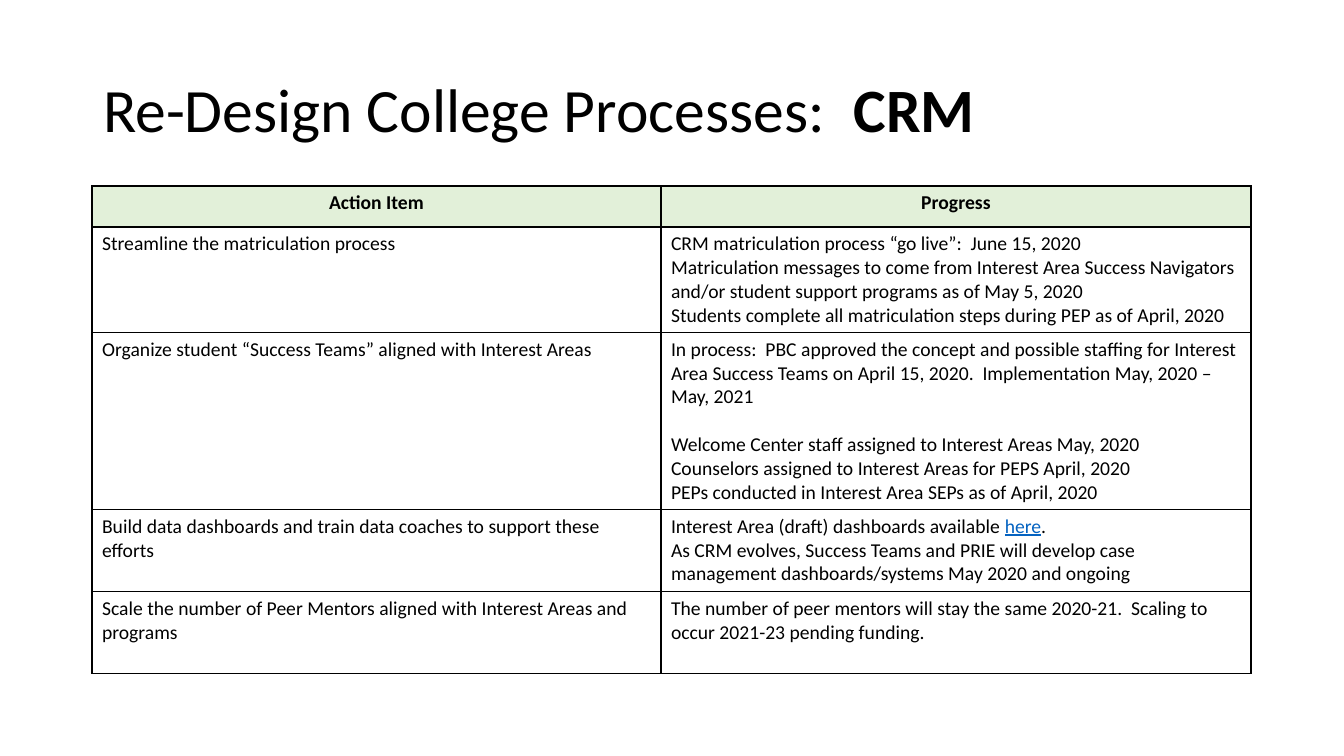
from dataclasses import dataclass

from lxml.etree import SubElement
from pptx import Presentation
from pptx.dml.color import RGBColor
from pptx.enum.text import MSO_ANCHOR as Anchor, MSO_AUTO_SIZE as AutoSize, PP_ALIGN as Align
from pptx.oxml.ns import qn
from pptx.util import Emu, Pt

PX = 914400 / 100.8


@dataclass(frozen=True)
class Theme:
    font: str = "Calibri"
    ink: str = "000000"
    link: str = "0563C1"
    header: str = "E2F0D9"
    title_size: int = 44
    table_size: int = 14
    paragraph_gap: int = 17
    border: int = 1


THEME = Theme()

TITLE = [("Re-Design College Processes:  ", {}), ("CRM", {"bold": True})]
HEADERS = ["Action Item", "Progress"]
COLUMN_WIDTHS = [569, 590]
ROW_HEIGHTS = [41, 105, 177, 82, 82]

# Each progress entry is a list of paragraphs, each paragraph a list of spans.
ACTIONS = [
    ("Streamline the matriculation process", [
        [("CRM matriculation process “go live”:  June 15, 2020", {})],
        [("Matriculation messages to come from Interest Area Success Navigators "
          "and/or student support programs as of May 5, 2020", {})],
        [("Students complete all matriculation steps during PEP as of April, 2020", {})],
    ]),
    ("Organize student “Success Teams” aligned with Interest Areas", [
        [("In process:  PBC approved the concept and possible staffing for Interest "
          "Area Success Teams on April 15, 2020.  Implementation May, 2020 – May, 2021", {})],
        [("Welcome Center staff assigned to Interest Areas May, 2020",
          {"gap": THEME.paragraph_gap})],
        [("Counselors assigned to Interest Areas for PEPS April, 2020", {})],
        [("PEPs conducted in Interest Area SEPs as of April, 2020", {})],
    ]),
    ("Build data dashboards and train data coaches to support these efforts", [
        [("Interest Area (draft) dashboards available ", {}),
         ("here", {"color": THEME.link, "underline": True}),
         (".", {})],
        [("As CRM evolves, Success Teams and PRIE will develop case "
          "management dashboards/systems May 2020 and ongoing", {})],
    ]),
    ("Scale the number of Peer Mentors aligned with Interest Areas and programs", [
        [("The number of peer mentors will stay the same 2020-21.  Scaling to "
          "occur 2021-23 pending funding.", {})],
    ]),
]


def px(length):
    return Emu(round(length * PX))


def add_span(para, text, size=THEME.table_size, color=THEME.ink, bold=False,
             underline=False, align=Align.LEFT, gap=0):
    """Append formatted text; a gap is space in points above its paragraph."""
    para.alignment = align
    if gap:
        para.space_before = Pt(gap)
    span = para.add_run()
    span.text = text
    font = span.font
    font.name, font.size = THEME.font, Pt(size)
    font.bold, font.underline = bold, underline
    font.color.rgb = RGBColor.from_string(color)


def fill_cell(cell, paragraphs, fill=None):
    properties = cell._tc.get_or_add_tcPr()
    for side in ("lnL", "lnR", "lnT", "lnB"):
        line = SubElement(properties, qn(f"a:{side}"), w=str(Pt(THEME.border)))
        SubElement(SubElement(line, qn("a:solidFill")), qn("a:srgbClr"), val=THEME.ink)
    if fill:
        cell.fill.solid()
        cell.fill.fore_color.rgb = RGBColor.from_string(fill)
    else:
        cell.fill.background()
    frame = cell.text_frame
    for index, spans in enumerate(paragraphs):
        para = frame.add_paragraph() if index else frame.paragraphs[0]
        for text, style in spans:
            add_span(para, text, **style)


def place_title(page, left, top, width, height):
    title = page.shapes.title
    title.left, title.top, title.width, title.height = map(px, (left, top, width, height))
    frame = title.text_frame
    frame.word_wrap = True
    frame.auto_size = AutoSize.NONE
    frame.vertical_anchor = Anchor.MIDDLE
    para = frame.paragraphs[0]
    para.line_spacing = 0.9
    for text, style in TITLE:
        add_span(para, text, size=THEME.title_size, **style)


def place_progress_table(page, left, top):
    size = (sum(COLUMN_WIDTHS), sum(ROW_HEIGHTS))
    table = page.shapes.add_table(len(ROW_HEIGHTS), len(COLUMN_WIDTHS),
                                  *map(px, (left, top, *size))).table
    table.first_row = table.horz_banding = False
    for column, width in zip(table.columns, COLUMN_WIDTHS):
        column.width = px(width)
    for row, height in zip(table.rows, ROW_HEIGHTS):
        row.height = px(height)
    for column, text in enumerate(HEADERS):
        heading = [(text, {"bold": True, "align": Align.CENTER})]
        fill_cell(table.cell(0, column), [heading], THEME.header)
    for row, (action, progress) in enumerate(ACTIONS, start=1):
        fill_cell(table.cell(row, 0), [[(action, {})]])
        fill_cell(table.cell(row, 1), progress)


def main():
    deck = Presentation()
    deck.slide_width, deck.slide_height = px(1344), px(756)
    page = deck.slides.add_slide(deck.slide_layouts.get_by_name("Title Only"))
    place_title(page, 93, 40, 1159, 146)
    place_progress_table(page, 92, 186)
    deck.save("out.pptx")


if __name__ == "__main__":
    main()
